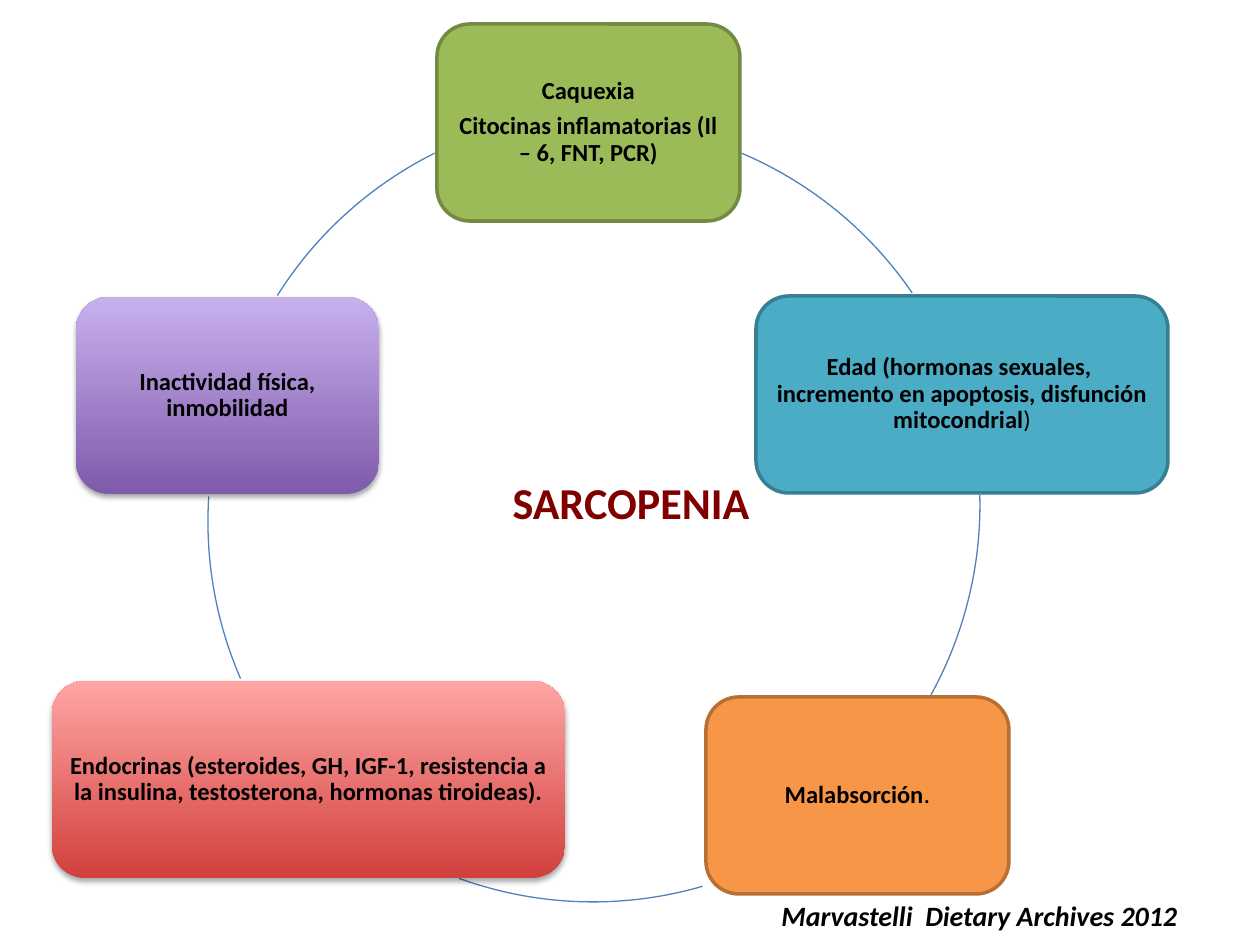
import pptx
import pptx.util
import pptx.dml.color
import pptx.enum.shapes
import pptx.enum.text
import lxml.etree

PX = 914400 // 126
KIND = pptx.enum.shapes.MSO_SHAPE
ALIGN = pptx.enum.text.PP_ALIGN
MID = pptx.enum.text.MSO_ANCHOR.MIDDLE
Pt = pptx.util.Pt
NS = "http://schemas.openxmlformats.org/drawingml/2006/main"
HEX = {
    "green": "9BBB59", "moss": "738A42", "teal": "4BACC6", "sea": "377F92",
    "orange": "F79646", "rust": "B76F34", "red": "D1403C", "pink": "FFA6A5",
    "purple": "7F5BAB", "lilac": "C8B0ED", "arc": "4F81BD",
    "maroon": "800000", "black": "000000",
}
RING = 786  # diameter of the circle
TALL = 197  # height of every box


def rgb(name):
    return pptx.dml.color.RGBColor.from_string(HEX[name])


def style(run, size, color="black", bold=True):
    run.font.name = "Calibri"
    run.font.size = Pt(size)
    run.font.bold = bold
    run.font.color.rgb = rgb(color)


deck = pptx.Presentation()
deck.slide_width = 1260 * PX
deck.slide_height = 945 * PX
slide = deck.slides.add_slide(deck.slide_layouts[5])

title = slide.shapes.title
title.left, title.top, title.width, title.height = [
    n * PX for n in (64, 423, 1134, 158)]
title.text_frame.text = "SARCOPENIA"
title.text_frame.vertical_anchor = MID
title.text_frame.paragraphs[0].alignment = ALIGN.CENTER
style(title.text_frame.paragraphs[0].runs[0], 25.2, "maroon")

# box left, top, width; fill; edge; light end of gradient; paragraphs of (text, size, bold);
# then the arc that leaves the box clockwise: ring left, top; start and end in degrees
steps = [
    (437, 24, 303, "green", "moss", None,
     [[("Caquexia", 14, True)],
      [("Citocinas inflamatorias (Il – 6, FNT, PCR)", 14, True)]],
     195, 122, 293, 325.6),
    (756, 296, 412, "teal", "sea", None,
     [[("Edad (hormonas sexuales,  incremento en apoptosis, disfunción mitocondrial",
        14, True), (")", 14, False)]],
     194, 112, 358.5, 28.9),
    (706, 697, 303, "orange", "rust", None,
     [[("Malabsorción", 14, True), (".", 15, False)]],
     200, 116, 73.8, 109.9),
    (52, 681, 513, "red", None, "pink",
     [[("Endocrinas (esteroides, GH, IGF-1, resistencia a la insulina, "
        "testosterona, hormonas tiroideas).", 14, True)]],
     208, 129, 156.5, 183.7),
    (76, 297, 303, "purple", None, "lilac",
     [[("Inactividad física, inmobilidad", 14, True)]],
     217, 112, 212.2, 243.5),
]

for left, top, wide, fill, edge, light, paras, ax, ay, start, end in steps:
    box = slide.shapes.add_shape(
        KIND.ROUNDED_RECTANGLE, left * PX, top * PX, wide * PX, TALL * PX)
    box.shadow.inherit = False
    if light:
        box.fill.gradient()
        box.fill.gradient_angle = 90
        for stop, name, pos in zip(box.fill.gradient_stops, (fill, light), (0, 1)):
            stop.color.rgb = rgb(name)
            stop.position = pos
        box.line.fill.background()
        glow = box._element.spPr.find(f"{{{NS}}}effectLst")
        cast = lxml.etree.SubElement(
            glow, f"{{{NS}}}outerShdw", blurRad=str(Pt(3.1)), dist=str(Pt(1.8)),
            dir="5400000", rotWithShape="0")
        tint = lxml.etree.SubElement(cast, f"{{{NS}}}srgbClr", val=HEX["black"])
        lxml.etree.SubElement(tint, f"{{{NS}}}alpha", val="35000")
    else:
        box.fill.solid()
        box.fill.fore_color.rgb = rgb(fill)
        box.line.color.rgb = rgb(edge)
        box.line.width = Pt(2)

    frame = box.text_frame
    frame.word_wrap = True
    frame.vertical_anchor = MID
    frame.margin_left = frame.margin_right = 8 * PX
    frame.margin_top = frame.margin_bottom = 8 * PX
    for i, parts in enumerate(paras):
        para = frame.add_paragraph() if i else frame.paragraphs[0]
        para.alignment = ALIGN.CENTER
        para.line_spacing = 0.9
        para.space_after = Pt(5)
        for text, size, bold in parts:
            run = para.add_run()
            run.text = text
            style(run, size, bold=bold)

    arc = slide.shapes.add_shape(KIND.ARC, ax * PX, ay * PX, RING * PX, RING * PX)
    arc.shadow.inherit = False
    arc.fill.background()
    arc.line.color.rgb = rgb("arc")
    arc.line.width = Pt(0.75)
    # an angle is stored in 1/60000 degree, an adjustment in 1/100000
    arc.adjustments[0] = start * 0.6
    arc.adjustments[1] = end * 0.6

cite = slide.shapes.add_textbox(769 * PX, 892 * PX, 563 * PX, 47 * PX)
cite.text_frame.word_wrap = True
cite.text_frame.text = "Marvastelli  Dietary Archives 2012"
run = cite.text_frame.paragraphs[0].runs[0]
style(run, 16)
run.font.italic = True

deck.save("out.pptx")
